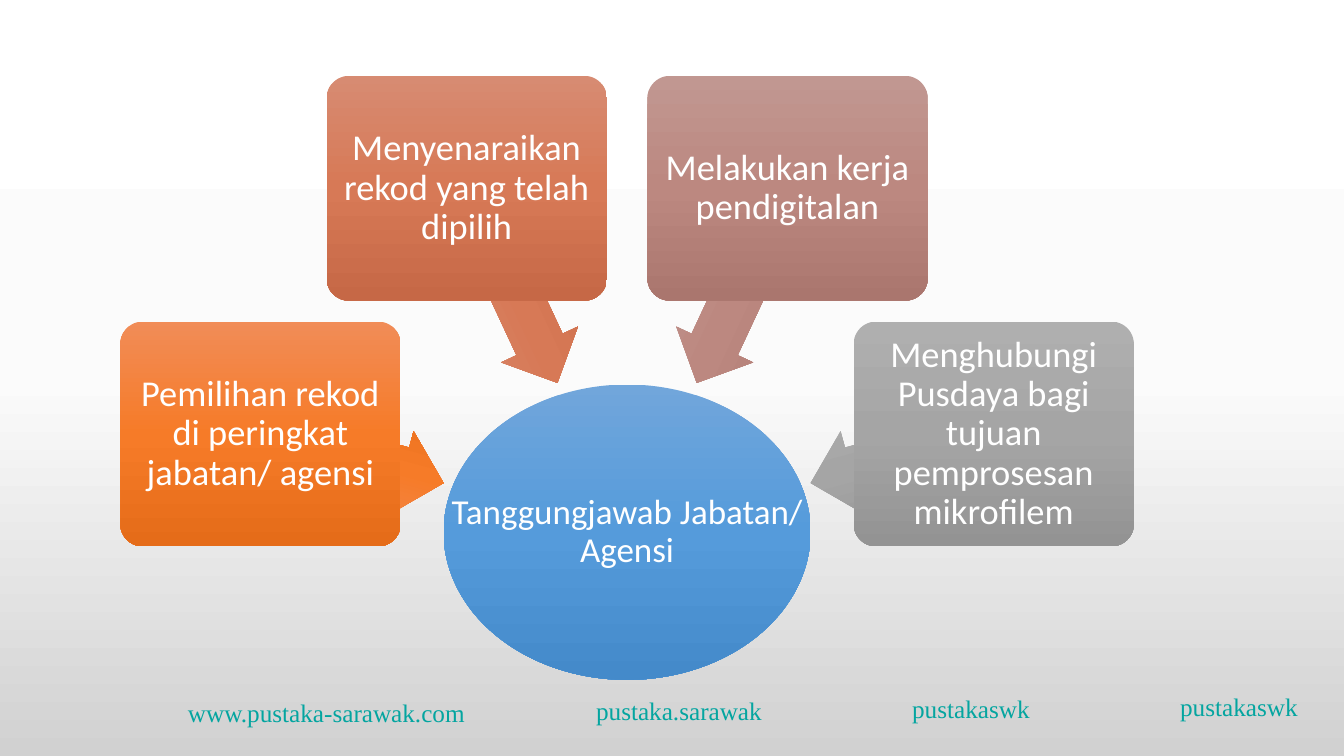
"""Build a radial slide of four agency duties pointing at a central hub."""
import math

import pptx
import pptx.dml.color
import pptx.enum.shapes
import pptx.enum.text
import pptx.oxml.ns
import pptx.util
from lxml import etree

RGB = pptx.dml.color.RGBColor
SHAPE = pptx.enum.shapes.MSO_SHAPE
ALIGN = pptx.enum.text.PP_ALIGN
WHITE = RGB(0xFF, 0xFF, 0xFF)
TEAL = RGB(0x04, 0xA5, 0xA0)
BACKDROP = (WHITE, RGB(0xFB, 0xFB, 0xFB), RGB(0xD1, 0xD1, 0xD1))
BLUE = (RGB(0x71, 0xA6, 0xDB), RGB(0x55, 0x9B, 0xDB), RGB(0x44, 0x8A, 0xCA))
ORANGE = (RGB(0xF1, 0x8C, 0x57), RGB(0xF6, 0x7B, 0x28), RGB(0xE5, 0x6C, 0x19))
RUST = (RGB(0xD7, 0x8B, 0x72), RGB(0xD7, 0x79, 0x56), RGB(0xC6, 0x68, 0x46))
ROSE = (RGB(0xC1, 0x97, 0x91), RGB(0xBC, 0x88, 0x80), RGB(0xAA, 0x76, 0x6E))
GREY = (RGB(0xAF, 0xAF, 0xAF), RGB(0xA5, 0xA5, 0xA5), RGB(0x93, 0x93, 0x93))

HUB_TEXT = "Tanggungjawab Jabatan/ Agensi"
DUTIES = [
    ("Pemilihan rekod di peringkat jabatan/ agensi", ORANGE, 1.88),
    ("Menyenaraikan rekod yang telah dipilih", RUST, 2.13),
    ("Melakukan kerja pendigitalan", ROSE, 2.13),
    ("Menghubungi Pusdaya bagi tujuan pemprosesan mikrofilem", GREY, 1.88),
]
CONTACTS = [
    ("www.pustaka-sarawak.com", 1.71, 6.87, 3.0, ALIGN.RIGHT),
    ("pustaka.sarawak", 5.63, 6.85, 2.21, ALIGN.CENTER),
    ("pustakaswk", 8.77, 6.83, 1.72, ALIGN.CENTER),
    ("pustakaswk", 11.51, 6.81, 1.46, ALIGN.RIGHT),
]

SLIDE_SIZE = (13.33, 7.5)
HUB_CENTRE = (6.22, 5.28)
HUB_SIZE = (3.64, 2.93)
CARD_SIZE = (2.78, 2.23)
ARROW_HEIGHT = 0.84
ORBIT = 3.765
FIRST_ANGLE, ANGLE_STEP = 195, 50


def paint(fill, element, colours):
    fill.gradient()
    fill.gradient_angle = 270
    qn = pptx.oxml.ns.qn
    stops = next(element.iter(qn("a:gsLst")))
    for stop in list(stops):
        stops.remove(stop)
    for index, colour in enumerate(colours):
        stop = etree.SubElement(stops, qn("a:gs"), pos=str(index * 50000))
        etree.SubElement(stop, qn("a:srgbClr"), val=str(colour))


def frame(centre, size):
    corner = [middle - length / 2 for middle, length in zip(centre, size)]
    return [pptx.util.Inches(value) for value in (*corner, *size)]


def orbit_point(angle, distance):
    turn = math.radians(angle)
    return (HUB_CENTRE[0] + distance * math.cos(turn),
            HUB_CENTRE[1] + distance * math.sin(turn))


def add_figure(page, preset, centre, size, colours, adjustments=()):
    figure = page.shapes.add_shape(preset, *frame(centre, size))
    figure.shadow.inherit = False
    figure.line.fill.background()
    for index, value in enumerate(adjustments):
        figure.adjustments[index] = value
    paint(figure.fill, figure._element, colours)
    return figure


def write(box, text, size, font, colour, align):
    box.text_frame.word_wrap = True
    para = box.text_frame.paragraphs[0]
    para.alignment = align
    span = para.add_run()
    span.text = text
    span.font.size = pptx.util.Pt(size)
    span.font.name = font
    span.font.color.rgb = colour


def write_centred(box, text, size, inset):
    write(box, text, size, "Calibri", WHITE, ALIGN.CENTER)
    words = box.text_frame
    words.vertical_anchor = pptx.enum.text.MSO_ANCHOR.MIDDLE
    words.margin_left = words.margin_right = pptx.util.Inches(inset)
    words.margin_top = words.margin_bottom = pptx.util.Inches(inset)
    words.paragraphs[0].line_spacing = 0.9


def main():
    deck = pptx.Presentation()
    deck.slide_width, deck.slide_height = map(pptx.util.Inches, SLIDE_SIZE)
    page = deck.slides.add_slide(deck.slide_layouts[6])
    paint(page.background.fill, page._element, BACKDROP)

    for text, left, top, width, align in CONTACTS:
        place = map(pptx.util.Inches, (left, top, width, 0.4))
        box = page.shapes.add_textbox(*place)
        write(box, text, 18, "Times New Roman", TEAL, align)

    add_figure(page, SHAPE.OVAL, HUB_CENTRE, HUB_SIZE, BLUE)
    hub_label = page.shapes.add_textbox(*frame(HUB_CENTRE, HUB_SIZE))
    write_centred(hub_label, HUB_TEXT, 25, 0.02)

    for index, (text, colours, length) in enumerate(DUTIES):
        angle = FIRST_ANGLE + index * ANGLE_STEP
        arrow = add_figure(page, SHAPE.LEFT_ARROW,
                           orbit_point(angle, ORBIT - length / 2),
                           (length, ARROW_HEIGHT), colours, (0.6, 0.5))
        arrow.rotation = angle
        card = add_figure(page, SHAPE.ROUNDED_RECTANGLE,
                          orbit_point(angle, ORBIT), CARD_SIZE, colours, (0.1,))
        write_centred(card, text, 26, 0)

    deck.save("out.pptx")


if __name__ == "__main__":
    main()
